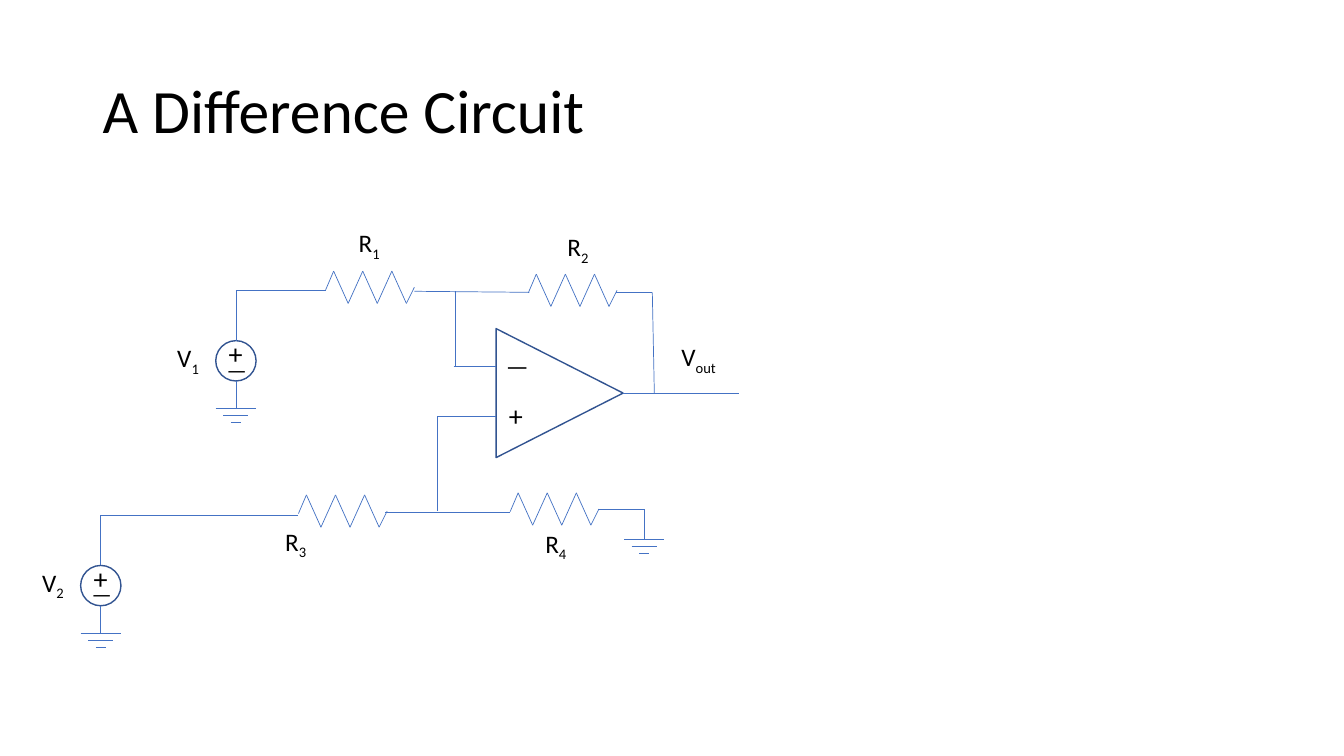
from itertools import pairwise

from lxml import etree
from pptx import Presentation
from pptx import util as u
from pptx.dml.color import RGBColor
from pptx.enum import shapes, text
from pptx.oxml import ns

WIDTH, HEIGHT = u.Inches(13.33), u.Inches(7.5)
COLUMN, ROW = WIDTH / 1333, HEIGHT / 750
COLORS = {"text": "000000", "wire": "4472C4", "outline": "325491"}
FONT = "Calibri"


def columns(count):
    return round(count * COLUMN)


def rows(count):
    return round(count * ROW)


def place(box):
    left, top, width, height = box
    return columns(left), rows(top), columns(width), rows(height)


def color(name):
    return RGBColor.from_string(COLORS[name])


def apply(target, values):
    for name, value in values.items():
        setattr(target, name, value)


def draw_text(slide, box, content, size, subscript="", **frame_format):
    frame = slide.shapes.add_textbox(*place(box)).text_frame
    apply(frame, {"word_wrap": True, "margin_right": 0, **frame_format})
    paragraph = frame.paragraphs[0]
    for piece, baseline in ((content, 0), (subscript, -25000)):
        if piece:
            run = paragraph.add_run()
            run.text = piece
            apply(run.font, {"name": FONT, "size": u.Pt(size)})
            run.font.color.rgb = color("text")
            if baseline:
                run.font._element.set("baseline", str(baseline))
    return paragraph


def draw_label(slide, left, top, letter, subscript):
    draw_text(slide, (left, top, 57, 40), letter, 18, subscript)


def draw_wire(slide, *points):
    for (x1, y1), (x2, y2) in pairwise(points):
        wire = slide.shapes.add_connector(
            shapes.MSO_CONNECTOR.STRAIGHT, columns(x1), rows(y1), columns(x2), rows(y2))
        wire.line.width = u.Pt(0.5)
        wire.line.color.rgb = color("wire")
        etree.SubElement(wire._element.spPr, ns.qn("a:effectLst"))


def draw_outline(slide, kind, box, rotation=0):
    shape = slide.shapes.add_shape(kind, *place(box))
    shape.shadow.inherit = False
    shape.rotation = rotation
    shape.fill.background()
    shape.line.width = u.Pt(1)
    shape.line.color.rgb = color("outline")


def draw_title(slide, box):
    paragraph = draw_text(slide, box, "A Difference Circuit", 44,
                          vertical_anchor=text.MSO_ANCHOR.MIDDLE)
    paragraph.line_spacing = 0.9


def draw_resistor(slide, box, subscript, label_left, label_top):
    left, top, width, height = box
    step = width / 6.1
    bends = [(left + width * 0.09 + step * i, top + height * (i % 2)) for i in range(6)]
    draw_wire(slide, (left, top + height * 0.58), *bends,
              (left + width, top + height * 0.5))
    draw_label(slide, left + label_left, top + label_top, "R", subscript)


def draw_ground(slide, box):
    left, top, width, height = box
    center = left + width / 2
    for i, share in enumerate((1, 0.62, 0.25)):
        half, y = width * share / 2, top + height * i / 2
        draw_wire(slide, (center - half, y), (center + half, y))


def draw_source(slide, box, subscript):
    left, top, width, height = box
    center, bottom = left + width / 2, top + height
    draw_outline(slide, shapes.MSO_SHAPE.OVAL, box)
    draw_text(slide, (left + 3, top - 9, 34, 44), "+", 20)
    draw_text(slide, (left + 1, top + 10, 34, 37), "—", 16)
    draw_label(slide, left - 48, top - 3, "V", subscript)
    draw_wire(slide, (center, top - 50), (center, top))
    draw_wire(slide, (center, bottom), (center, bottom + 27))
    draw_ground(slide, (left, bottom + 27, width, 14))


def draw_amplifier(slide, box):
    left, top, width, height = box
    turned = (left + (width - height) / 2, top + (height - width) / 2, height, width)
    draw_outline(slide, shapes.MSO_SHAPE.ISOSCELES_TRIANGLE, turned, 90)
    draw_text(slide, (left, top + 17, 34, 40), "—", 18)
    draw_text(slide, (left + 3, top + 64, 34, 44), "+", 20)
    draw_wire(slide, (left - 42, top + 37), (left, top + 37))
    draw_wire(slide, (left - 58, top + 87), (left, top + 87))
    middle = top + height / 2
    draw_wire(slide, (left + width, middle), (left + width + 115, middle))
    draw_label(slide, left + 174, top + 8, "V", "out")


def draw_circuit(slide, left, top):
    def at(x, y):
        return left + x, top + y

    draw_amplifier(slide, (*at(412, 106), 126, 128))
    for x, y, subscript, label_left, label_top in (
            (243, 49, "1", 23, -48), (444, 52, "2", 29, -47),
            (216, 271, "3", -23, 26), (426, 269, "4", 25, 30)):
        draw_resistor(slide, (*at(x, y), 88, 32), subscript, label_left, label_top)
    draw_source(slide, (*at(134, 118), 40, 40), "1")
    draw_source(slide, (*at(0, 341), 40, 40), "2")
    draw_ground(slide, (*at(539, 315), 40, 14))
    for wire in (
            ((154, 68), (243, 68)),
            ((331, 69), (445, 70)),
            ((372, 69), (372, 143)),
            ((531, 70), (567, 70), (569, 170)),
            ((354, 193), (354, 287)),
            ((20, 291), (216, 291)),
            ((302, 288), (426, 288)),
            ((513, 285), (559, 285), (559, 315))):
        draw_wire(slide, *(at(x, y) for x, y in wire))


def main():
    presentation = Presentation()
    apply(presentation, {"slide_width": WIDTH, "slide_height": HEIGHT})
    slide = presentation.slides.add_slide(presentation.slide_layouts[6])
    draw_title(slide, (92, 40, 1150, 145))
    draw_circuit(slide, 80, 220)
    presentation.save("out.pptx")


if __name__ == "__main__":
    main()
